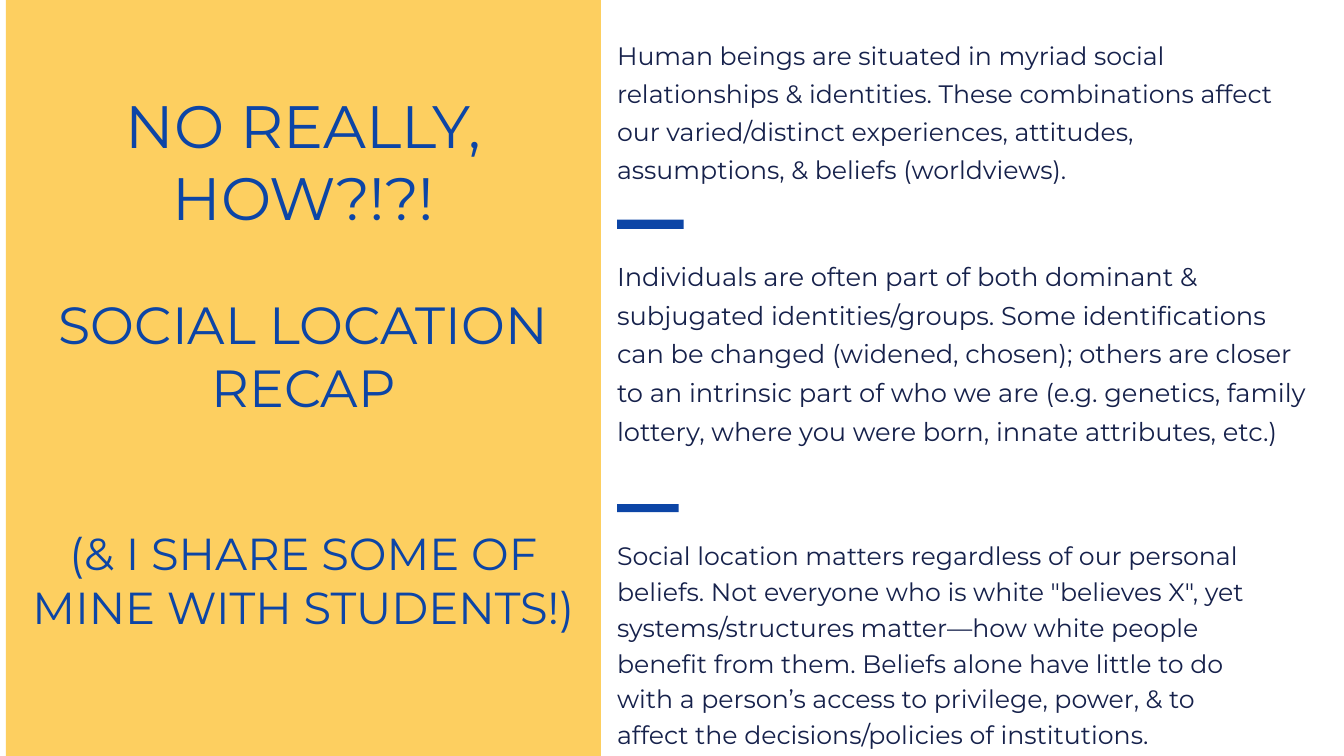
from pptx import Presentation
from pptx import util as u
from pptx.dml.color import RGBColor
from pptx.enum import shapes, text

YELLOW = RGBColor(0xFD, 0xCF, 0x60)
BLUE = RGBColor(0x0C, 0x45, 0xA6)
NAVY = RGBColor(0x16, 0x21, 0x4B)

PANEL_LEFT, PANEL_WIDTH = 0.06, 5.9
COLUMN_LEFT = 6.12

HEADINGS = [
    ("NO REALLY, HOW?!?!", 42.7, 51.2, 0),
    ("SOCIAL LOCATION RECAP", 37.3, 44.8, 43.2),
    ("(& I SHARE SOME OF MINE WITH STUDENTS!)", 32, 38.4, 76.8),
]

POINTS = [
    (0.33, 6.76, 1.1, 18, 27,
     "Human beings are situated in myriad social relationships & identities. "
     "These combinations affect our varied/distinct experiences, attitudes, "
     "assumptions, & beliefs (worldviews)."),
    (2.51, 6.93, 1.92, 18.4, 27.6,
     "Individuals are often part of both dominant & subjugated "
     "identities/groups. Some identifications can be changed (widened, "
     "chosen); others are closer to an intrinsic part of who we are (e.g. "
     "genetics, family lottery, where you were born, innate attributes, etc.)"),
    (5.31, 6.38, 1.73, 18, 25.5,
     "Social location matters regardless of our personal beliefs. Not "
     "everyone who is white \"believes X\", yet systems/structures "
     "matter—how white people benefit from them. Beliefs alone have little "
     "to do with a person’s access to privilege, power, & to affect the "
     "decisions/policies of institutions."),
]

DIVIDERS = [(2.18, 0.66, 0.09), (5, 0.61, 0.08)]


class SlideBuilder:
    font_name = "Montserrat"

    def __init__(self, slide):
        self.slide = slide

    def rectangle(self, left, top, width, height, color):
        shape = self.slide.shapes.add_shape(
            shapes.MSO_SHAPE.RECTANGLE, u.Inches(left), u.Inches(top),
            u.Inches(width), u.Inches(height))
        shape.shadow.inherit = False
        shape.fill.solid()
        shape.fill.fore_color.rgb = color
        shape.line.fill.background()

    def prepare_frame(self, frame):
        frame.margin_left = frame.margin_right = 0
        frame.margin_top = frame.margin_bottom = 0
        frame.word_wrap = True
        frame.auto_size = text.MSO_AUTO_SIZE.NONE
        frame.vertical_anchor = text.MSO_ANCHOR.TOP

    def format_paragraph(self, paragraph, size, spacing, color, alignment):
        paragraph.alignment = alignment
        paragraph.line_spacing = u.Pt(spacing)
        for run in paragraph.runs:
            run.font.name = self.font_name
            run.font.size = u.Pt(size)
            run.font.color.rgb = color

    def title(self, left, top, width, height, headings):
        title = self.slide.shapes.title
        title.left, title.top = u.Inches(left), u.Inches(top)
        title.width, title.height = u.Inches(width), u.Inches(height)
        title.element.getparent().append(title.element)
        frame = title.text_frame
        self.prepare_frame(frame)
        frame.text = "\n".join(heading[0] for heading in headings)
        for paragraph, heading in zip(frame.paragraphs, headings):
            wording, size, spacing, gap = heading
            self.format_paragraph(paragraph, size, spacing, BLUE,
                                  text.PP_ALIGN.CENTER)
            paragraph.space_before = u.Pt(gap)

    def text_block(self, left, top, width, height, size, spacing, wording):
        box = self.slide.shapes.add_textbox(
            u.Inches(left), u.Inches(top), u.Inches(width), u.Inches(height))
        frame = box.text_frame
        self.prepare_frame(frame)
        frame.text = wording
        self.format_paragraph(frame.paragraphs[0], size, spacing, NAVY,
                              text.PP_ALIGN.LEFT)


def main():
    presentation = Presentation()
    presentation.slide_width = u.Inches(13.33)
    presentation.slide_height = u.Inches(7.5)
    title_only = presentation.slide_layouts.get_by_name("Title Only")
    builder = SlideBuilder(presentation.slides.add_slide(title_only))

    builder.rectangle(PANEL_LEFT, 0, PANEL_WIDTH, 7.5, YELLOW)
    builder.title(PANEL_LEFT, 0.88, PANEL_WIDTH, 5.43, HEADINGS)
    for point in POINTS:
        builder.text_block(COLUMN_LEFT, *point)
    for divider in DIVIDERS:
        builder.rectangle(COLUMN_LEFT, *divider, BLUE)

    presentation.save("out.pptx")


if __name__ == "__main__":
    main()
